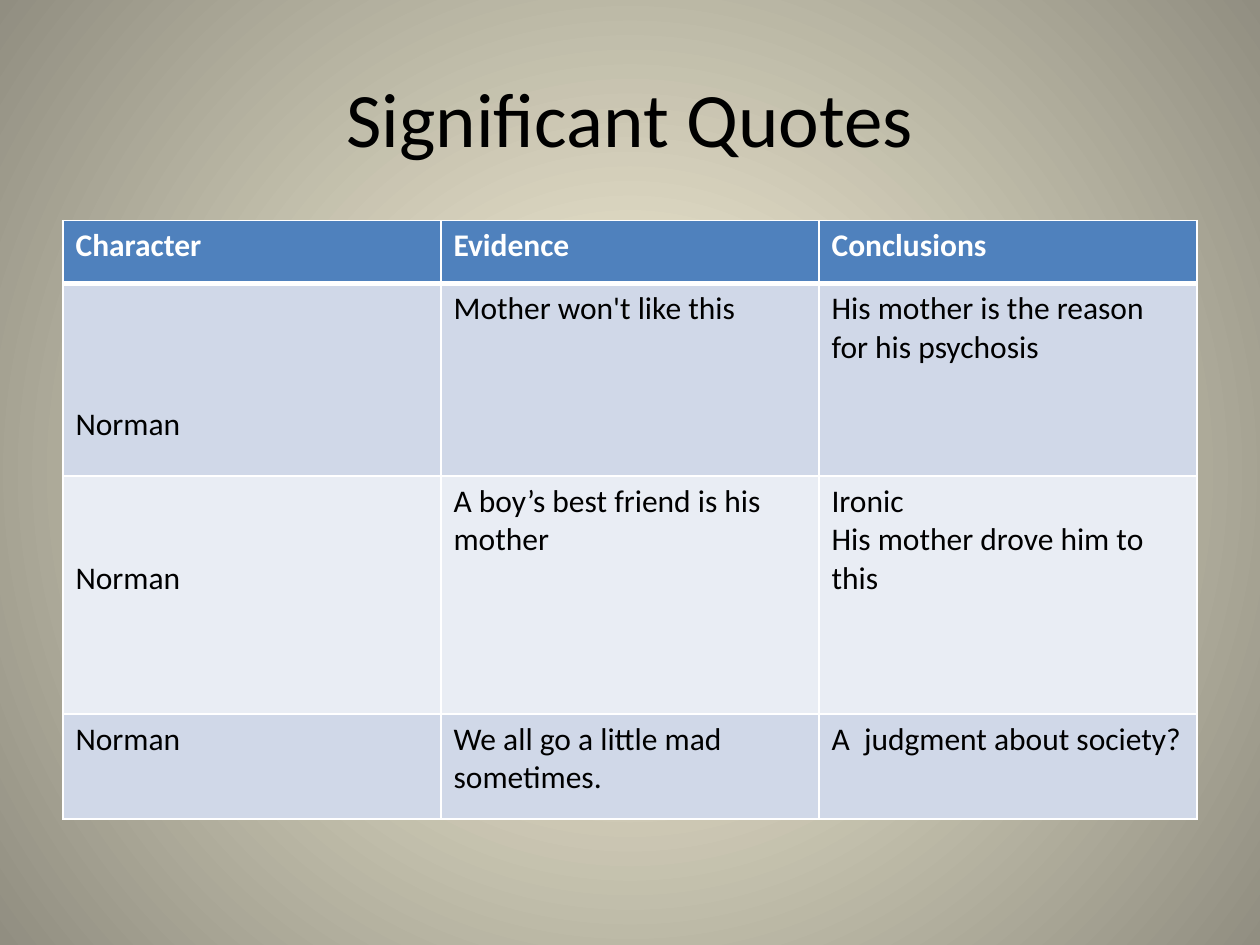
from lxml.etree import SubElement
from pptx import Presentation
from pptx.dml.color import RGBColor
from pptx.enum.text import MSO_ANCHOR, PP_ALIGN
from pptx.oxml import parse_xml
from pptx.oxml.ns import nsdecls, qn
from pptx.util import Pt

BLACK = RGBColor(0x00, 0x00, 0x00)
WHITE = RGBColor(0xFF, 0xFF, 0xFF)
HEADER_BLUE = RGBColor(0x4F, 0x81, 0xBD)
BAND_DARK = RGBColor(0xD0, 0xD8, 0xE8)
BAND_LIGHT = RGBColor(0xE9, 0xED, 0xF4)
GLOW_CENTER = RGBColor(0xFC, 0xF7, 0xDD)
GLOW_EDGE = RGBColor(0x91, 0x8E, 0x81)

TITLE_FORMAT = {"name": "Calibri", "size": Pt(44), "bold": False}
HEADER_FORMAT = {"name": "Calibri", "size": Pt(18), "bold": True}
BODY_FORMAT = {"name": "Calibri", "size": Pt(18), "bold": False}

CELL_MARGIN = 3.6
LINE_HEIGHT = 22
COLUMN_WIDTH = 216
ROW_HEIGHTS = [36, 110, 136, 60]
QUOTES = [
    ["Character", "Evidence", "Conclusions"],
    ["Norman", "Mother won't like this", "His mother is the reason for his psychosis"],
    ["Norman", "A boy’s best friend is his\nmother", "Ironic\nHis mother drove him to this"],
    ["Norman", "We all go a little mad sometimes.", "A  judgment about society?"],
]
# Lines by which a cell's text is lowered, by (row, column)
LOWERED_LINES = {(1, 0): 3, (2, 0): 2}


class SlideBuilder:
    def __init__(self, presentation):
        self.slide = presentation.slides.add_slide(presentation.slide_layouts[6])

    def radial_background(self, center, edge):
        fill = self.slide.background.fill
        fill.gradient()
        for stop, color, position in zip(fill.gradient_stops, (center, edge), (0, 1)):
            stop.color.rgb = color
            stop.position = position
        gradient = self.slide.element.find(".//" + qn("a:gradFill"))
        linear = gradient.find(qn("a:lin"))
        gradient.replace(linear, parse_xml(
            f'<a:path {nsdecls("a")} path="circle">'
            '<a:fillToRect l="50000" t="50000" r="50000" b="50000"/></a:path>'))

    def set_text(self, frame, text, font_format, color, alignment=PP_ALIGN.LEFT):
        frame.text = text
        for paragraph in frame.paragraphs:
            paragraph.alignment = alignment
            for run in paragraph.runs:
                for name, value in font_format.items():
                    setattr(run.font, name, value)
                run.font.color.rgb = color

    def title(self, text, left, top, width, height):
        shape = self.slide.shapes.add_textbox(Pt(left), Pt(top), Pt(width), Pt(height))
        frame = shape.text_frame
        frame.word_wrap = True
        frame.vertical_anchor = MSO_ANCHOR.MIDDLE
        self.set_text(frame, text, TITLE_FORMAT, BLACK, PP_ALIGN.CENTER)

    def borders(self, cell, widths):
        properties = cell._tc.get_or_add_tcPr()
        for side, width in widths.items():
            line = SubElement(properties, qn(f"a:ln{side}"), w=str(Pt(width)))
            fill = SubElement(line, qn("a:solidFill"))
            SubElement(fill, qn("a:srgbClr"), val=str(WHITE))

    def table(self, rows, left, top, column_width, row_heights):
        column_count = len(rows[0])
        table = self.slide.shapes.add_table(
            len(rows), column_count, Pt(left), Pt(top),
            Pt(column_width * column_count), Pt(sum(row_heights))).table
        for column in table.columns:
            column.width = Pt(column_width)
        for row_index, texts in enumerate(rows):
            table.rows[row_index].height = Pt(row_heights[row_index])
            is_header = row_index == 0
            band = BAND_DARK if row_index % 2 else BAND_LIGHT
            # The rule between header and body is thicker than the rest
            widths = {"L": 1, "R": 1, "T": 3 if row_index == 1 else 1, "B": 3 if is_header else 1}
            for column_index, text in enumerate(texts):
                cell = table.cell(row_index, column_index)
                self.borders(cell, widths)
                cell.fill.solid()
                cell.fill.fore_color.rgb = HEADER_BLUE if is_header else band
                lowered = LOWERED_LINES.get((row_index, column_index), 0)
                cell.margin_top = Pt(CELL_MARGIN + lowered * LINE_HEIGHT)
                self.set_text(cell.text_frame, text,
                              HEADER_FORMAT if is_header else BODY_FORMAT,
                              WHITE if is_header else BLACK)


def main():
    presentation = Presentation()
    presentation.slide_width, presentation.slide_height = Pt(720), Pt(540)
    builder = SlideBuilder(presentation)

    # Background and title
    builder.radial_background(GLOW_CENTER, GLOW_EDGE)
    builder.title("Significant Quotes", 36, 21.6, 648, 90)

    # Table of quotes
    builder.table(QUOTES, 36, 126, COLUMN_WIDTH, ROW_HEIGHTS)

    presentation.save("out.pptx")


if __name__ == "__main__":
    main()
